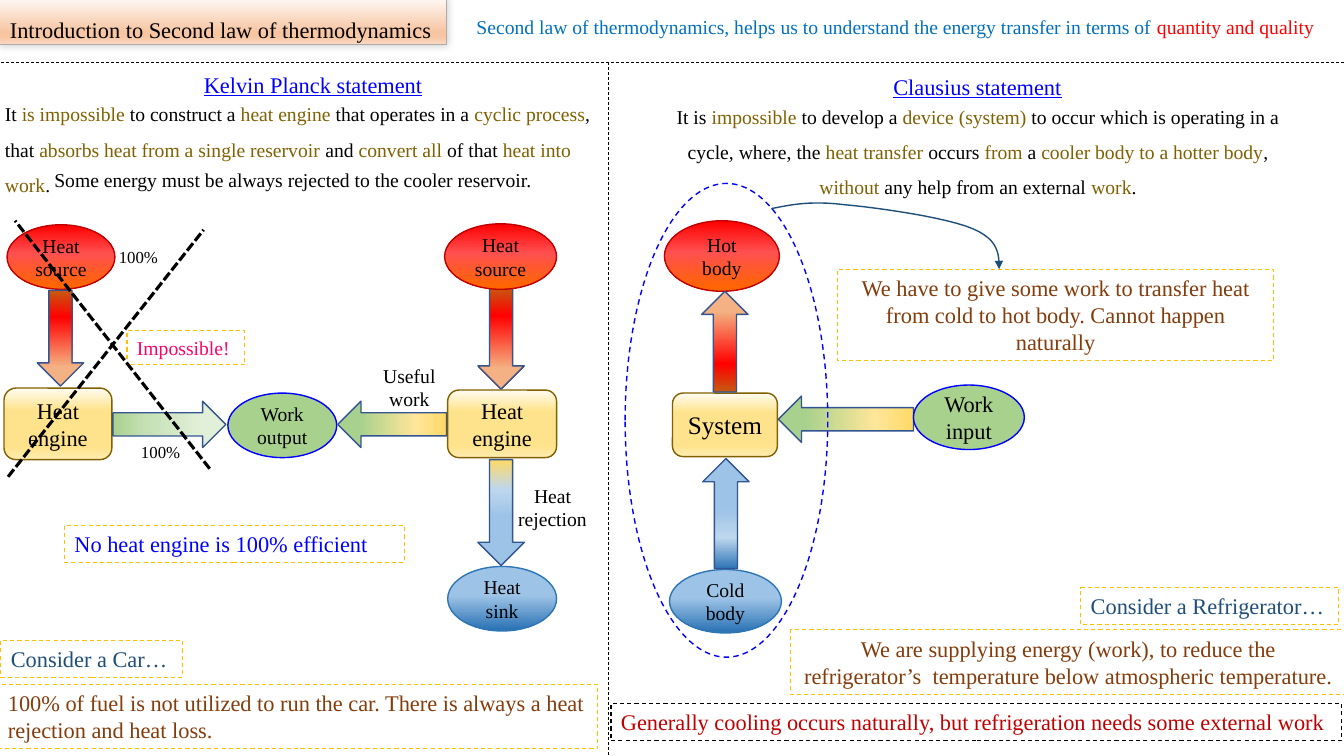
from itertools import cycle

from lxml.etree import SubElement
from pptx import Presentation
from pptx.dml.color import RGBColor
from pptx.enum.dml import MSO_LINE
from pptx.enum.shapes import MSO_CONNECTOR, MSO_SHAPE
from pptx.enum.text import MSO_ANCHOR, MSO_AUTO_SIZE, PP_ALIGN
from pptx.oxml.ns import qn
from pptx.util import Inches, Pt

FONT = "Times New Roman"
BLACK, BLUE, GOLD, OLIVE, BROWN, NAVY = "000000", "0000FF", "FFC000", "806000", "843C0B", "1F4E79"
GREEN, ARROW_EDGE = "A9D18E", "325491"
LEFT, CENTER = PP_ALIGN.LEFT, PP_ALIGN.CENTER

PEACH = [(0, "FEF8F5"), (74, "F7C5A2"), (83, "F7C5A2"), (100, "FAD8C1")]
HOT = [(0, "FF0000"), (45, "FF5050"), (97, "FF6600")]
COLD = [(0, "9DC3E6"), (45, "9DC3E6"), (97, "2E75B6")]
ENGINE = [(0, "FFFCF2"), (31, "FFE38C"), (83, "FFE38C"), (100, "FFECB2")]
HEAT_FLOW = [(0, "C55A11"), (28, "FF0000"), (80, "F4B183")]
FULL_WORK_FLOW = [(0, GREEN), (28, "C5E0B4"), (80, "E2F0D9")]
WORK_FLOW = [(0, "FFD966"), (28, "FFE699"), (80, GREEN)]
REJECTED_FLOW = [(0, "FFD966"), (28, "BDD7EE"), (54, "9DC3E6"), (80, "9DC3E6")]
COLD_FLOW = [(0, "2E75B6")] + REJECTED_FLOW[1:]


def rgb(value):
    return RGBColor.from_string(value)


def set_fill(shape, fill):
    """Fill with nothing, one colour, or a top-to-bottom list of (percent, colour) stops."""
    if fill is None:
        shape.fill.background()
    elif isinstance(fill, str):
        shape.fill.solid()
        shape.fill.fore_color.rgb = rgb(fill)
    else:
        shape.fill.gradient()
        shape.fill.gradient_angle = 270
        stops = shape._element.spPr.find(".//" + qn("a:gsLst"))
        for stop in list(stops):
            stops.remove(stop)
        for percent, colour in fill:
            stop = SubElement(stops, qn("a:gs"), pos=str(percent * 1000))
            SubElement(stop, qn("a:srgbClr"), val=colour)


def set_line(shape, colour, width, dash=None):
    shape.line.color.rgb = rgb(colour)
    shape.line.width = Pt(width)
    if dash:
        shape.line.dash_style = dash


def write(shape, text, size, colours=BLACK, align=CENTER, spacing=None, underline=None,
          anchor=MSO_ANCHOR.TOP, grow=True):
    """Write text; "|" moves to the next of the colours, "\n" starts a paragraph."""
    frame = shape.text_frame
    frame.word_wrap = True
    frame.vertical_anchor = anchor
    if grow:
        frame.auto_size = MSO_AUTO_SIZE.SHAPE_TO_FIT_TEXT
    colours = cycle([colours] if isinstance(colours, str) else colours)
    for index, line in enumerate(text.split("\n")):
        paragraph = frame.add_paragraph() if index else frame.paragraphs[0]
        paragraph.alignment = align
        if spacing:
            paragraph.line_spacing = spacing
        for part in line.split("|"):
            run = paragraph.add_run()
            run.text = part
            run.font.color.rgb = rgb(next(colours))
            formats = {"name": FONT, "size": Pt(size), "underline": underline}
            for name, value in formats.items():
                setattr(run.font, name, value)


def add_figure(slide, kind, box, fill, edge, width=1, dash=None):
    shape = slide.shapes.add_shape(kind, *map(Inches, box))
    shape.shadow.inherit = False
    set_fill(shape, fill)
    set_line(shape, edge, width, dash)
    return shape


def add_node(slide, kind, box, fill, edge, text, size=14):
    shape = add_figure(slide, kind, box, fill, edge)
    write(shape, text, size, anchor=MSO_ANCHOR.MIDDLE, grow=False)


def add_oval(slide, box, fill, edge, text, size=14):
    add_node(slide, MSO_SHAPE.OVAL, box, fill, edge, text, size)


def add_engine(slide, box, text="Heat engine", size=16):
    add_node(slide, MSO_SHAPE.ROUNDED_RECTANGLE, box, ENGINE, OLIVE, text, size)


def add_flow(slide, x, y, length, fill, rotation=0, upward=False):
    arrow = add_figure(slide, MSO_SHAPE.DOWN_ARROW, (x, y, 0.46, length), fill, ARROW_EDGE)
    arrow.rotation = rotation
    if upward:
        arrow._element.spPr.find(qn("a:xfrm")).set("flipV", "1")


def add_note(slide, box, text, colour, align=LEFT, size=16, edge=GOLD):
    shape = add_figure(slide, MSO_SHAPE.RECTANGLE, box, None, edge, 0.75, MSO_LINE.DASH)
    write(shape, text, size, colour, align)


def add_text(slide, box, text, size=14, colours=BLACK, **formats):
    write(slide.shapes.add_textbox(*map(Inches, box)), text, size, colours, **formats)


def add_line(slide, start, end, width, dash):
    line = slide.shapes.add_connector(MSO_CONNECTOR.STRAIGHT, *map(Inches, start + end))
    set_line(line, BLACK, width, dash)
    SubElement(line._element.spPr, qn("a:effectLst"))


def add_curved_arrow(slide, start, curves, steps=12):
    """Draw cubic curves, each given as two control points and an end point."""
    points = [start]
    for curve in curves:
        corners = [points[-1], *curve]
        for step in range(1, steps + 1):
            t = step / steps
            weights = ((1 - t) ** 3, 3 * t * (1 - t) ** 2, 3 * t ** 2 * (1 - t), t ** 3)
            points.append(tuple(sum(w * corner[axis] for w, corner in zip(weights, corners))
                                for axis in (0, 1)))
    builder = slide.shapes.build_freeform(*map(Inches, start))
    builder.add_line_segments([(Inches(x), Inches(y)) for x, y in points[1:]], close=False)
    curve = builder.convert_to_shape()
    curve.shadow.inherit = False
    set_fill(curve, None)
    set_line(curve, NAVY, 1)
    SubElement(curve.line._get_or_add_ln(), qn("a:tailEnd"), type="triangle")


def add_title(slide):
    title = add_figure(slide, MSO_SHAPE.RECTANGLE, (0, -0.02, 4.43, 0.46), PEACH, "AFABAB", 0.75)
    write(title, "Introduction to Second law of thermodynamics", 16, align=LEFT, spacing=1.5)
    effects = title._element.spPr.find(qn("a:effectLst"))
    shadow = SubElement(effects, qn("a:outerShdw"), blurRad=str(Pt(6)), dist="0",
                        dir=str(315 * 60000), rotWithShape="0")
    SubElement(SubElement(shadow, qn("a:srgbClr"), val=BLACK), qn("a:alpha"), val="20000")
    add_text(slide, (4.57, -0.02, 8.62, 0.41),
             "Second law of thermodynamics, helps us to understand the energy transfer "
             "in terms of |quantity and quality", colours=["0070C0", "FF0000"], spacing=1.5)
    add_line(slide, (6.03, 0.62), (6.03, 7.5), 0.5, MSO_LINE.DASH)
    add_line(slide, (13.33, 0.62), (0, 0.62), 0.5, MSO_LINE.DASH)


def add_statement(slide, heading_box, heading, body_box, body, align):
    add_text(slide, heading_box, heading, 16, BLUE, spacing=1.5, underline=True)
    add_text(slide, body_box, body, colours=[BLACK, OLIVE], align=align, spacing=1.5)


def add_kelvin_planck(slide):
    add_statement(slide, (1.88, 0.52, 2.45, 0.46), "Kelvin Planck statement",
                  (-0.05, 0.85, 6.16, 1.12),
                  "It |is impossible |to construct a |heat engine |that operates in a "
                  "|cyclic process|, that |absorbs heat from a single reservoir |and "
                  "|convert all |of that |heat into work|.", LEFT)
    add_text(slide, (0.44, 1.62, 5.51, 0.34),
             "Some energy must be always rejected to the cooler reservoir.", align=LEFT)

    add_oval(slide, (0.07, 2.23, 1.07, 0.64), HOT, "C00000", "Heat source")
    add_engine(slide, (0.04, 3.85, 1.07, 0.71))
    add_oval(slide, (2.26, 3.9, 1.08, 0.64), GREEN, BLUE, "Work output")
    add_flow(slide, 0.37, 2.88, 0.95, HEAT_FLOW)
    add_flow(slide, 1.45, 3.65, 1.12, FULL_WORK_FLOW, rotation=270)
    for x, y in ((1.08, 2.4), (1.3, 4.33)):
        add_text(slide, (x, y, 0.75, 0.3), "100%", 12, align=LEFT)
    add_note(slide, (1.26, 3.28, 1.17, 0.34), "Impossible!", "FF0066", size=14)
    add_line(slide, (2.08, 4.65), (0.15, 2.19), 2.25, MSO_LINE.SQUARE_DOT)
    add_line(slide, (0.08, 4.73), (2.02, 2.28), 2.25, MSO_LINE.SQUARE_DOT)

    add_flow(slide, 3.66, 3.67, 1.08, WORK_FLOW, rotation=90)
    add_engine(slide, (4.44, 3.87, 1.08, 0.67))
    add_oval(slide, (4.44, 5.62, 1.08, 0.64), COLD, "2E75B6", "Heat sink")
    add_flow(slide, 4.74, 2.85, 1.01, HEAT_FLOW)
    add_flow(slide, 4.74, 4.56, 1.05, REJECTED_FLOW)
    add_oval(slide, (4.41, 2.22, 1.11, 0.65), HOT, "C00000", "Heat source")
    add_text(slide, (5.02, 4.75, 0.92, 0.57), "Heat rejection")
    add_text(slide, (3.67, 3.56, 0.78, 0.57), "Useful work")

    add_note(slide, (0.64, 5.21, 3.37, 0.37), "No heat engine is 100% efficient", BLUE)
    add_note(slide, (0.01, 6.35, 1.8, 0.37), "Consider a Car…", NAVY)
    add_note(slide, (-0.02, 6.79, 5.95, 0.64), "100% of fuel is not utilized to run the car. "
             "There is always a heat rejection and heat loss.", BROWN)


def add_clausius(slide):
    add_statement(slide, (8.26, 0.54, 2.87, 0.46), "Clausius statement", (6.5, 0.87, 6.4, 1.12),
                  "It is |impossible| to develop a |device (system)| to occur which is operating "
                  "in a cycle, where, the |heat transfer |occurs |from| a "
                  "|cooler body to a hotter body|, |without| any help from an external |work|.",
                  CENTER)

    add_flow(slide, 8.16, 3.49, 1.34, WORK_FLOW, rotation=90)
    add_oval(slide, (6.59, 2.19, 1.14, 0.7), HOT, "C00000", "Hot body")
    add_engine(slide, (6.67, 3.9, 1.04, 0.63), "System", 18)
    add_oval(slide, (6.64, 5.65, 1.11, 0.63), COLD, "2E75B6", "Cold body")
    add_flow(slide, 6.96, 2.89, 1, HEAT_FLOW, upward=True)
    add_flow(slide, 6.97, 4.55, 1.09, COLD_FLOW, upward=True)
    add_oval(slide, (9.06, 3.82, 1.1, 0.64), GREEN, BLUE, "Work\ninput", 16)
    add_figure(slide, MSO_SHAPE.OVAL, (6.2, 1.82, 2.01, 4.7), None, BLUE, dash=MSO_LINE.DASH)
    add_curved_arrow(slide, (7.65, 2.07), [((7.85, 2.03), (8.04, 1.99), (8.37, 2.03)),
                                           ((8.71, 2.06), (9.4, 2.16), (9.65, 2.27)),
                                           ((9.91, 2.38), (9.91, 2.53), (9.91, 2.67))])

    add_note(slide, (8.31, 2.67, 4.32, 0.91), "We have to give some work to transfer heat from "
             "cold to hot body. Cannot happen naturally", BROWN, CENTER)
    add_note(slide, (10.72, 5.83, 2.56, 0.37), "Consider a Refrigerator…", NAVY)
    add_note(slide, (7.84, 6.25, 5.51, 0.64), "We are supplying energy (work), to reduce the "
             "refrigerator’s  temperature below atmospheric temperature.", BROWN, CENTER)
    add_note(slide, (6.06, 6.98, 7.25, 0.37), "Generally cooling occurs naturally, but "
             "refrigeration needs some external work", "C00000", edge=BLACK)


def main():
    presentation = Presentation()
    presentation.slide_width = Inches(13.33)
    presentation.slide_height = Inches(7.5)
    slide = presentation.slides.add_slide(presentation.slide_layouts[6])
    add_title(slide)
    add_kelvin_planck(slide)
    add_clausius(slide)
    presentation.save("out.pptx")


if __name__ == "__main__":
    main()
